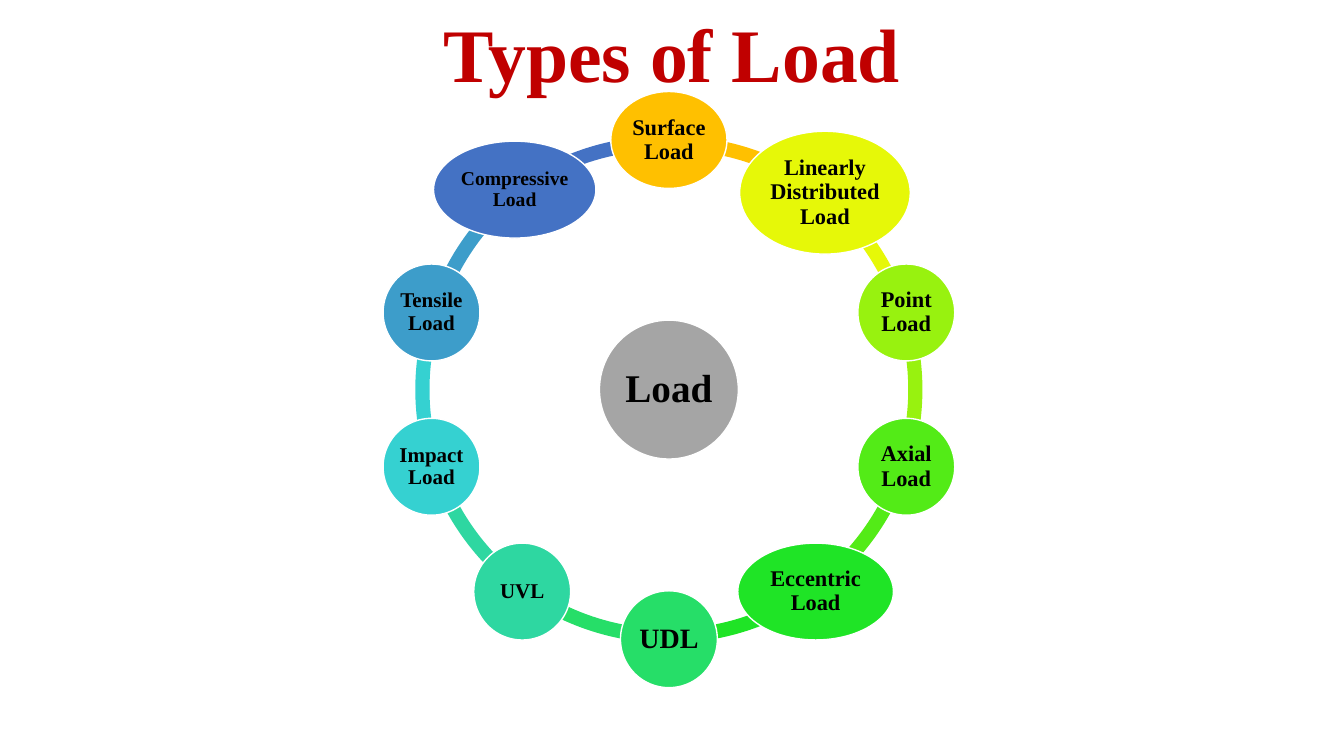
import math
from dataclasses import dataclass

import pptx
import pptx.dml.color
import pptx.enum.shapes
import pptx.enum.text
import pptx.util

Pt = pptx.util.Pt
RGBColor = pptx.dml.color.RGBColor
MSO_SHAPE = pptx.enum.shapes.MSO_SHAPE
MSO_ANCHOR = pptx.enum.text.MSO_ANCHOR
PP_ALIGN = pptx.enum.text.PP_ALIGN

WHITE = RGBColor(0xFF, 0xFF, 0xFF)
BLACK = RGBColor(0x00, 0x00, 0x00)
RED = RGBColor(0xC0, 0x00, 0x00)
GRAY = RGBColor(0xA5, 0xA5, 0xA5)
AMBER = RGBColor(0xFF, 0xC0, 0x00)
YELLOW = RGBColor(0xE6, 0xF8, 0x08)
LIME = RGBColor(0x98, 0xF2, 0x0F)
GRASS = RGBColor(0x53, 0xEB, 0x17)
GREEN = RGBColor(0x1F, 0xE4, 0x26)
EMERALD = RGBColor(0x26, 0xDE, 0x68)
MINT = RGBColor(0x2E, 0xD7, 0xA1)
TURQUOISE = RGBColor(0x35, 0xD1, 0xD1)
SKY = RGBColor(0x3D, 0x9D, 0xCA)
BLUE = RGBColor(0x44, 0x72, 0xC4)

# Ring geometry in points and degrees
CENTER_X, CENTER_Y = 477.8, 278.3
RADIUS = 178.3
ARC_BOX = 362.2
ARC_THICKNESS = 0.028
NODE = 69.2
HUB = 99.2


@dataclass
class Load:
    """A node on the ring and the arc that leads clockwise to the next one."""
    name: str
    color: RGBColor
    font_size: float = 16
    width: float = NODE
    height: float = NODE
    shift: tuple = (0, 0)
    arc_shift: tuple = (0, 0)
    arc_angles: tuple = None


# Clockwise from the top
LOADS = [
    Load("Surface Load", AMBER, width=83, arc_shift=(2.2, 0), arc_angles=(269.32, 307.73)),
    Load("Linearly Distributed Load", YELLOW, width=121.9, height=87.8, shift=(6.7, 3.6),
         arc_shift=(-0.7, -2.2), arc_angles=(308.9, 342.76)),
    Load("Point Load", LIME),
    Load("Axial Load", GRASS),
    Load("Eccentric Load", GREEN, width=111.2),
    Load("UDL", EMERALD, 20),
    Load("UVL", MINT, 15),
    Load("Impact Load", TURQUOISE, 15),
    Load("Tensile Load", SKY, 15, arc_shift=(1.4, -3.6), arc_angles=(196.67, 231.33)),
    Load("Compressive Load", BLUE, 14, width=116, shift=(-5.3, 1.4),
         arc_shift=(-3.6, 0), arc_angles=(233.4, 271.24)),
]


class LoadSlide:
    """Holds the text style and the current slide."""
    font_name = "Times New Roman"
    line_spacing = 0.9

    def __init__(self, presentation):
        self.slide = presentation.slides.add_slide(presentation.slide_layouts[5])

    def add_label(self, shape, text, size, color, anchor):
        frame = shape.text_frame
        frame.word_wrap = True
        frame.vertical_anchor = anchor
        paragraph = frame.paragraphs[0]
        paragraph.alignment = PP_ALIGN.CENTER
        paragraph.line_spacing = self.line_spacing
        run = paragraph.add_run()
        run.text = text
        run.font.name = self.font_name
        run.font.size = Pt(size)
        run.font.bold = True
        run.font.color.rgb = color

    def title(self, text, left, top, width, height):
        shape = self.slide.shapes.title
        shape.left, shape.top = Pt(left), Pt(top)
        shape.width, shape.height = Pt(width), Pt(height)
        shape.fill.solid()
        shape.fill.fore_color.rgb = WHITE
        shape.text_frame.auto_size = pptx.enum.text.MSO_AUTO_SIZE.NONE
        self.add_label(shape, text, 54, RED, MSO_ANCHOR.BOTTOM)

    def centered_shape(self, kind, x, y, width, height, color):
        shape = self.slide.shapes.add_shape(
            kind, Pt(x - width / 2), Pt(y - height / 2), Pt(width), Pt(height))
        shape.shadow.inherit = False
        shape.fill.solid()
        shape.fill.fore_color.rgb = color
        return shape

    def arc(self, x, y, start, end, color):
        shape = self.centered_shape(MSO_SHAPE.BLOCK_ARC, x, y, ARC_BOX, ARC_BOX, color)
        shape.line.fill.background()
        # An angle adjustment of 0.6 is one degree
        shape.adjustments[0] = start * 0.6
        shape.adjustments[1] = end * 0.6
        shape.adjustments[2] = ARC_THICKNESS

    def node(self, text, x, y, width, height, color, font_size):
        shape = self.centered_shape(MSO_SHAPE.OVAL, x, y, width, height, color)
        shape.line.color.rgb = WHITE
        shape.line.width = Pt(1)
        frame = shape.text_frame
        frame.margin_left = frame.margin_right = Pt(1)
        frame.margin_top = frame.margin_bottom = Pt(1)
        self.add_label(shape, text, font_size, BLACK, MSO_ANCHOR.MIDDLE)


def main():
    presentation = pptx.Presentation()
    presentation.slide_width, presentation.slide_height = Pt(960), Pt(540)
    load_slide = LoadSlide(presentation)

    # Title
    load_slide.title("Types of Load", 25.2, 21.6, 909.4, 52.6)

    # Ring of arcs
    step = 360 / len(LOADS)
    angles = [(270 + step * index) % 360 for index in range(len(LOADS))]
    for load, angle in reversed(list(zip(LOADS, angles))):
        start, end = load.arc_angles or (angle, (angle + step) % 360)
        shift_x, shift_y = load.arc_shift
        load_slide.arc(CENTER_X + shift_x, CENTER_Y + shift_y, start, end, load.color)

    # Hub
    load_slide.node("Load", CENTER_X, CENTER_Y, HUB, HUB, GRAY, 28)

    # Load types
    for load, angle in zip(LOADS, angles):
        x = CENTER_X + RADIUS * math.cos(math.radians(angle)) + load.shift[0]
        y = CENTER_Y + RADIUS * math.sin(math.radians(angle)) + load.shift[1]
        load_slide.node(load.name, x, y, load.width, load.height, load.color, load.font_size)

    presentation.save("out.pptx")


if __name__ == "__main__":
    main()
